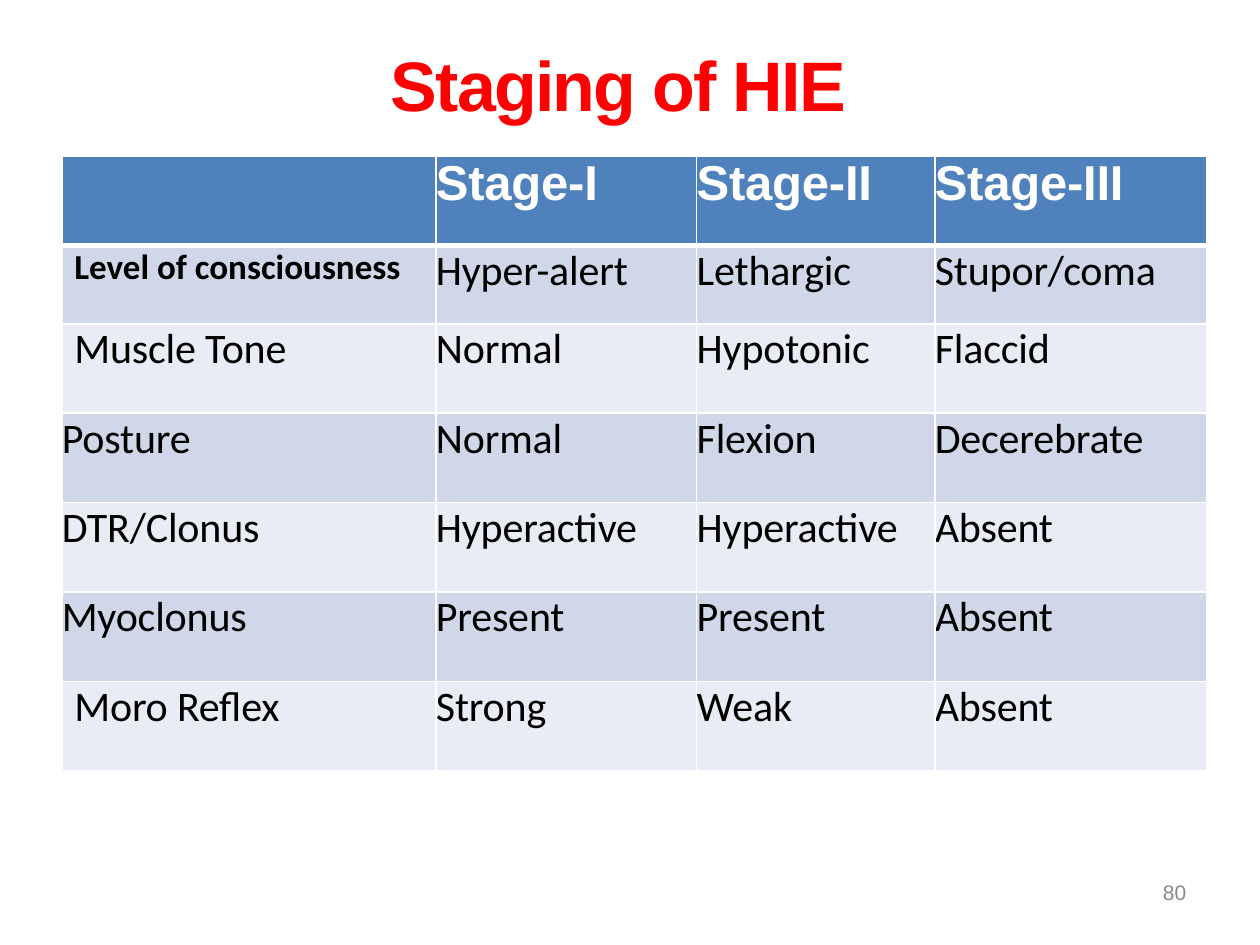
from lxml.etree import SubElement
from pptx import Presentation
from pptx.dml.color import RGBColor
from pptx.enum.text import MSO_ANCHOR, MSO_AUTO_SIZE, PP_ALIGN
from pptx.oxml.ns import qn
from pptx.util import Inches, Pt

RED = RGBColor(0xFF, 0x00, 0x00)
GRAY = RGBColor(0x88, 0x88, 0x88)
WHITE = RGBColor(0xFF, 0xFF, 0xFF)
BLACK = RGBColor(0x00, 0x00, 0x00)
HEADER_BLUE = RGBColor(0x4F, 0x81, 0xBC)
BANDS = [RGBColor(0xD0, 0xD7, 0xE8), RGBColor(0xE9, 0xEC, 0xF4)]

TITLE = "Staging of HIE"
PAGE_NUMBER = "80"
STAGING = [
    ("", "Stage-I", "Stage-II", "Stage-III"),
    ("Level of consciousness", "Hyper-alert", "Lethargic", "Stupor/coma"),
    ("Muscle Tone", "Normal", "Hypotonic", "Flaccid"),
    ("Posture", "Normal", "Flexion", "Decerebrate"),
    ("DTR/Clonus", "Hyperactive", "Hyperactive", "Absent"),
    ("Myoclonus", "Present", "Present", "Absent"),
    ("Moro Reflex", "Strong", "Weak", "Absent"),
]
INDENTED_SIGNS = {"Level of consciousness", "Muscle Tone", "Moro Reflex"}
COLUMN_WIDTHS = [2.97, 2.07, 1.89, 2.16]
ROW_HEIGHTS = [0.71, 0.62] + [0.71] * 5
SPACE_BEFORE = [2, 6] + [9] * 5


def write(frame, text, *, size, color, font="Calibri", bold=False,
          tracking=0, before=0, line=None, left=0):
    frame.margin_left = Inches(left)
    frame.margin_top = frame.margin_right = frame.margin_bottom = 0
    paragraph = getattr(frame, "text_frame", frame).paragraphs[0]
    paragraph.alignment = PP_ALIGN.LEFT
    paragraph.space_before = Pt(before)
    if line:
        paragraph.line_spacing = Pt(line)
    run = paragraph.add_run()
    run.text = text
    run.font.size = Pt(size)
    run.font.name = font
    run.font.bold = bold
    run.font.color.rgb = color
    run.font._element.set("spc", str(round(tracking * 100)))


def draw_borders(cell, top, bottom):
    properties = cell._tc.get_or_add_tcPr()
    for side, width in (("L", 1), ("R", 1), ("T", top), ("B", bottom)):
        border = SubElement(properties, qn(f"a:ln{side}"), w=str(Pt(width)))
        fill = SubElement(border, qn("a:solidFill"))
        SubElement(fill, qn("a:srgbClr"), val=str(WHITE))


def cell_format(row, column, text):
    if row == 0:
        return dict(size=28, color=WHITE, font="Arial", bold=True, tracking=-0.1)
    if row == 1 and column == 0:
        return dict(size=20, color=BLACK, bold=True, left=0.1)
    return dict(size=24, color=BLACK, tracking=-0.1,
                left=0.1 if text in INDENTED_SIGNS else 0)


def add_staging_table(slide):
    table = slide.shapes.add_table(
        len(STAGING), len(COLUMN_WIDTHS), Inches(0.49), Inches(1.24),
        Inches(sum(COLUMN_WIDTHS)), Inches(sum(ROW_HEIGHTS))).table
    table.horz_banding = False
    for column, width in zip(table.columns, COLUMN_WIDTHS):
        column.width = Inches(width)
    for row, height in zip(table.rows, ROW_HEIGHTS):
        row.height = Inches(height)
    for r, values in enumerate(STAGING):
        for c, text in enumerate(values):
            cell = table.cell(r, c)
            draw_borders(cell, top=3 if r == 1 else 1, bottom=3 if r == 0 else 1)
            cell.fill.solid()
            cell.fill.fore_color.rgb = BANDS[(r - 1) % 2] if r else HEADER_BLUE
            if text:
                write(cell, text, before=SPACE_BEFORE[r], **cell_format(r, c, text))


def main():
    deck = Presentation()
    deck.slide_width, deck.slide_height = Inches(10), Inches(7.5)
    slide = deck.slides.add_slide(deck.slide_layouts[5])

    title = slide.shapes.title
    title.left, title.top = Inches(3.09), Inches(0.33)
    title.width, title.height = Inches(3.82), Inches(0.69)
    heading = title.text_frame
    heading.auto_size = MSO_AUTO_SIZE.NONE
    heading.vertical_anchor = MSO_ANCHOR.TOP
    write(heading, TITLE, size=40, color=RED, font="Arial", bold=True,
          tracking=-1, left=0.01)

    add_staging_table(slide)

    page = slide.shapes.add_textbox(
        Inches(9.2), Inches(7.01), Inches(0.3), Inches(0.18)).text_frame
    page.word_wrap = True
    write(page, PAGE_NUMBER, size=12, color=GRAY, font="Arial", line=12, left=0.03)

    deck.save("out.pptx")


if __name__ == "__main__":
    main()
